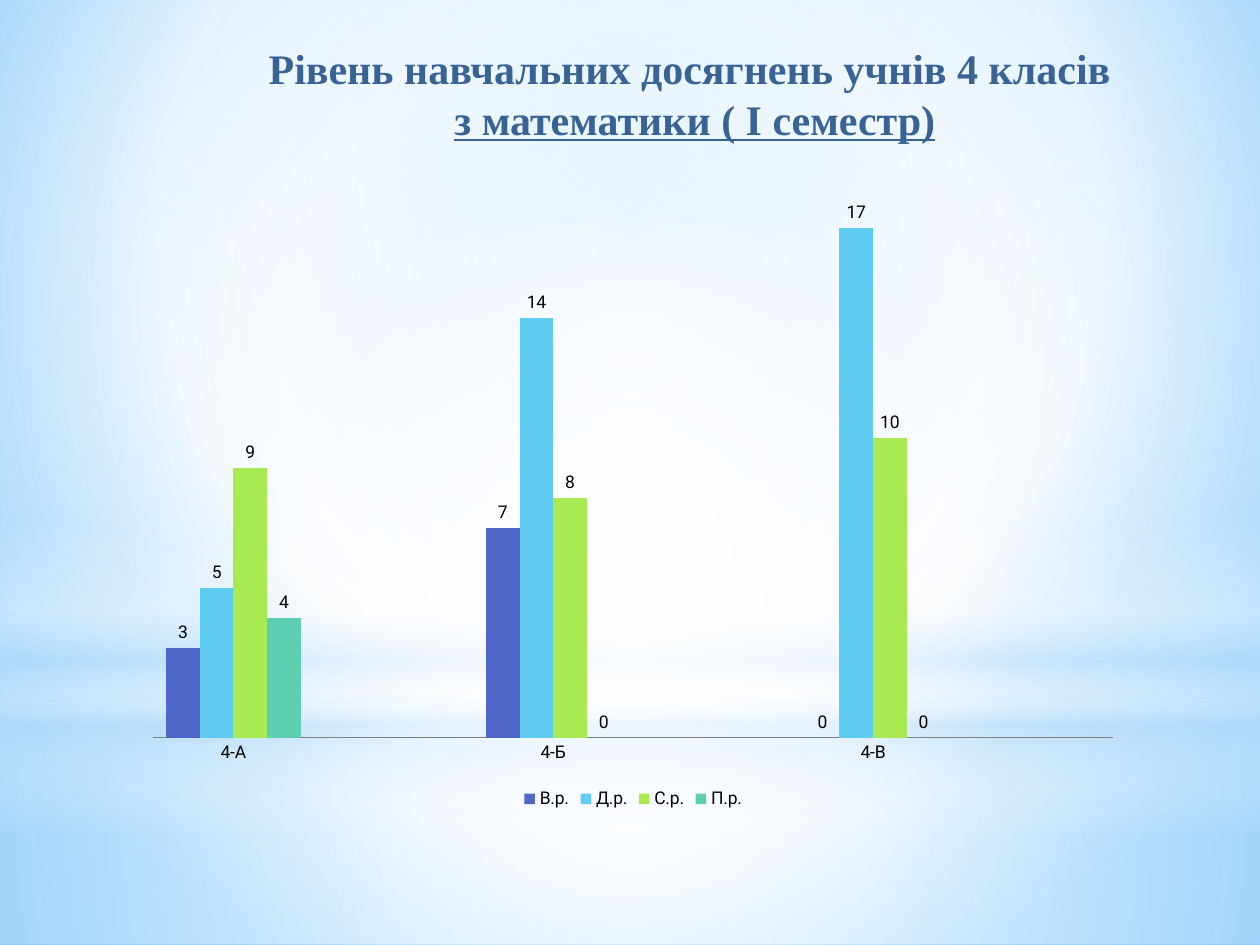
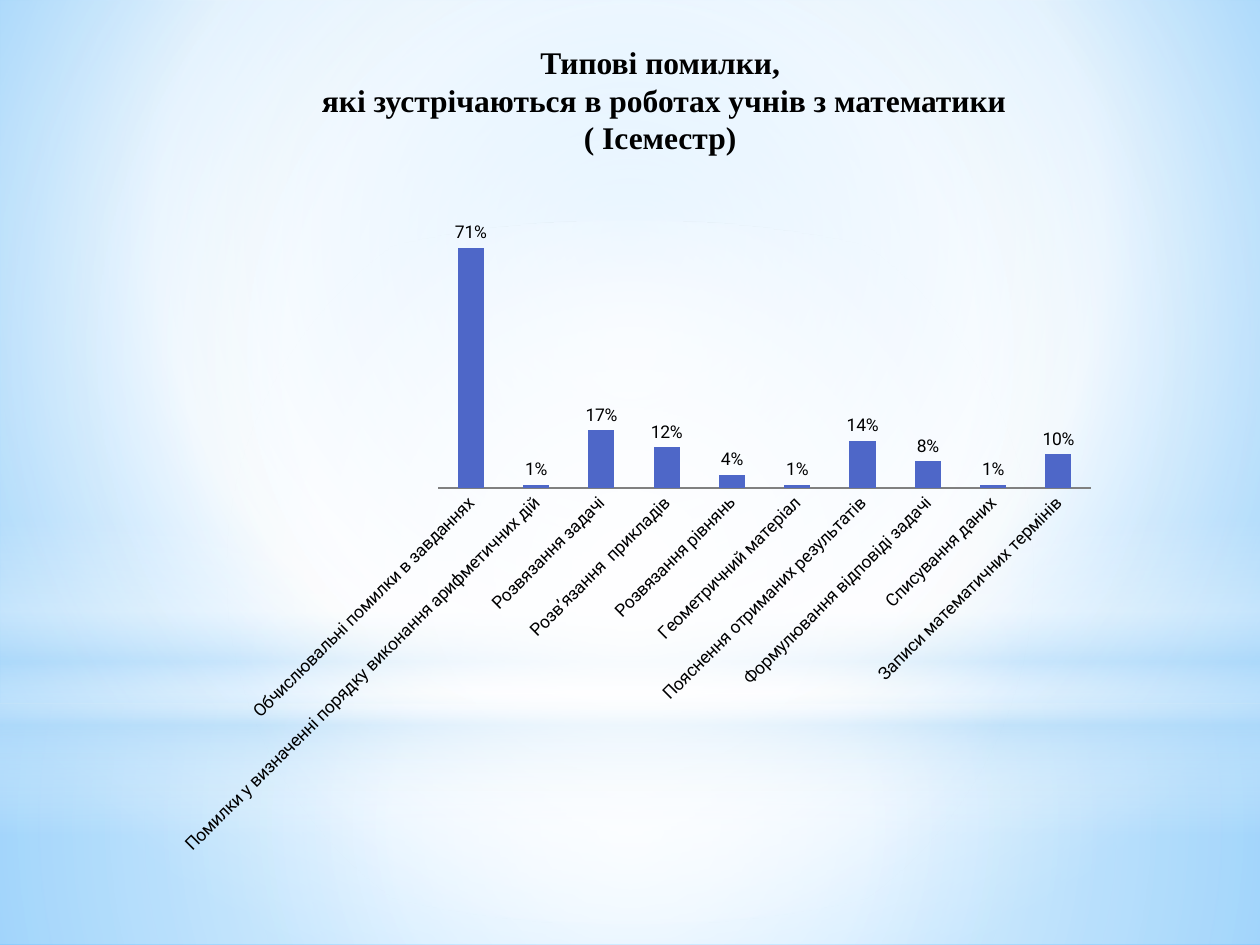
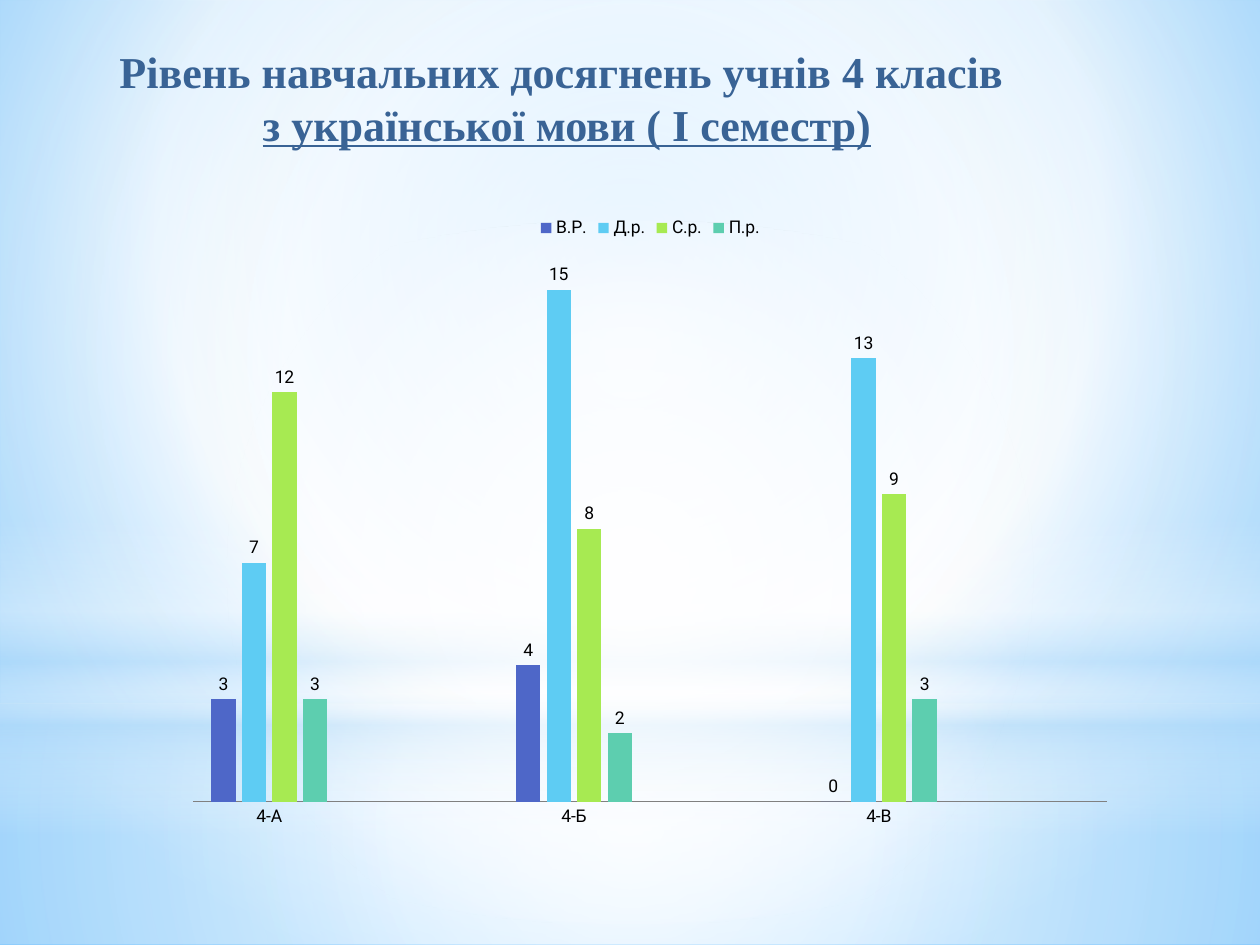
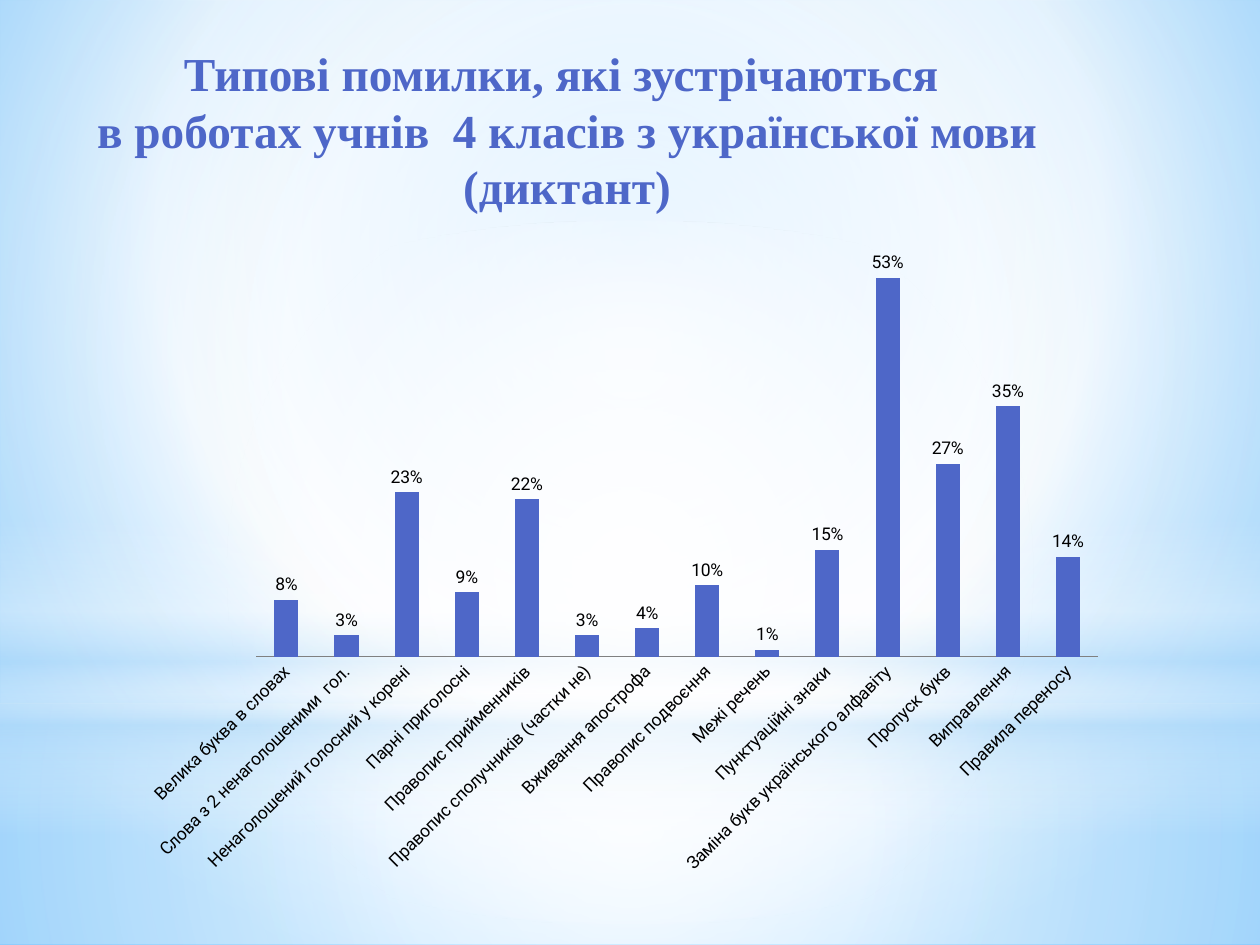
"""Build four slides of class results with column charts on a shared sky backdrop."""
import dataclasses

import lxml.etree
import pptx
import pptx.chart.data
import pptx.dml.color
import pptx.enum.chart
import pptx.enum.shapes
import pptx.enum.text
import pptx.oxml.ns
import pptx.util

Pt = pptx.util.Pt
RGB = pptx.dml.color.RGBColor.from_string
qn = pptx.oxml.ns.qn
Legend = pptx.enum.chart.XL_LEGEND_POSITION
Shape = pptx.enum.shapes.MSO_SHAPE


@dataclasses.dataclass(frozen=True)
class Theme:
    head: str = "Times New Roman"
    body: str = "Roboto"
    steel: str = "396395"
    blue: str = "4E67C8"
    black: str = "000000"
    axis: str = "808080"
    white: str = "FFFFFF"
    haze: str = "B4DCFA"
    sky: str = "9ED5FF"
    deep: str = "5BB9FF"
    bars: tuple = ("4E67C8", "5ECCF3", "A7EA52", "5DCEAF")
    label: float = 10
    small: float = 18
    large: float = 24
    wide: float = 25.2
    huge: float = 27


def gradient(stops, focus=None):
    fill = lxml.etree.Element(qn("a:gradFill"), rotWithShape="1")
    group = lxml.etree.SubElement(fill, qn("a:gsLst"))
    for place, color, alpha in stops:
        stop = lxml.etree.SubElement(group, qn("a:gs"), pos=str(place * 1000))
        tint = lxml.etree.SubElement(stop, qn("a:srgbClr"), val=color)
        if alpha < 100:
            lxml.etree.SubElement(tint, qn("a:alpha"), val=str(alpha * 1000))
    if focus:
        route = lxml.etree.SubElement(fill, qn("a:path"), path="circle")
        sides = {side: str(part * 1000) for side, part in zip("ltrb", focus)}
        lxml.etree.SubElement(route, qn("a:fillToRect"), **sides)
    else:
        lxml.etree.SubElement(fill, qn("a:lin"), ang="5400000", scaled="0")
    return fill


def paint(parent, fill):
    blank = parent.find(".//" + qn("a:noFill"))
    blank.getparent().replace(blank, fill)


class Deck:
    def __init__(self, theme):
        self.theme = theme
        self.show = pptx.Presentation()
        self.show.slide_width, self.show.slide_height = Pt(720), Pt(540)
        self.slide = None

    def add(self):
        self.slide = self.show.slides.add_slide(self.show.slide_layouts[5])

    def backdrop(self):
        t, mid = self.theme, (50, 50, 50, 50)
        master = self.show.slide_master
        master.background.fill.background()
        stops = [(0, t.sky, 100), (60, t.white, 100), (100, t.deep, 100)]
        paint(master.element, gradient(stops, (20, 10, 20, 60)))
        floor = [(0, t.white, 91), (37, t.white, 76), (100, t.haze, 79)]
        wall = [(0, t.white, 89), (48, t.white, 62), (100, t.haze, 79)]
        band = [(0, t.white, 0), (29, t.white, 30), (45, t.haze, 40),
                (55, t.white, 26), (65, t.haze, 60), (100, t.white, 0)]
        glow = [(0, t.white, 100), (56, t.white, 0)]
        layers = [(Shape.RECTANGLE, 402, 138, floor, mid),
                  (Shape.RECTANGLE, 0, 402, wall, mid),
                  (Shape.RECTANGLE, 297, 180, band, None),
                  (Shape.OVAL, 126, 402, glow, mid)]
        for index, (kind, top, height, stops, focus) in enumerate(layers):
            layer = self.slide.shapes.add_shape(kind, 0, Pt(top), Pt(720), Pt(height))
            layer.shadow.inherit = False
            layer.fill.background()
            layer.line.fill.background()
            paint(layer.element, gradient(stops, focus))
            master.element.cSld.spTree.insert(index + 2, layer.element)

    def title(self, box, paras, size, color, inset=3.6):
        title = self.slide.shapes.title
        title.left, title.top, title.width, title.height = map(Pt, box)
        frame = title.text_frame
        frame.word_wrap = True
        frame.auto_size = pptx.enum.text.MSO_AUTO_SIZE.NONE
        frame.vertical_anchor = pptx.enum.text.MSO_ANCHOR.TOP
        frame.margin_left = frame.margin_right = Pt(inset)
        frame.margin_top = frame.margin_bottom = Pt(3.6)
        for index, text in enumerate(paras):
            para = frame.add_paragraph() if index else frame.paragraphs[0]
            para.text = text
            para.alignment = pptx.enum.text.PP_ALIGN.CENTER
            self.style(para.font, self.theme.head, size, color)
            para.font.bold = True

    def underline(self):
        self.slide.shapes.title.text_frame.paragraphs[0].runs[-1].font.underline = True

    def style(self, font, name, size, color):
        font.name, font.size = name, Pt(size)
        font.color.rgb = RGB(color)

    def chart(self, box, cats, series, form="General", legend=None, gap=150, overlap=-25):
        data = pptx.chart.data.CategoryChartData(number_format=form)
        data.categories = cats
        for name, values in series:
            data.add_series(name, values)
        kind = pptx.enum.chart.XL_CHART_TYPE.COLUMN_CLUSTERED
        chart = self.slide.shapes.add_chart(kind, *map(Pt, box), data).chart
        self.style(chart.font, self.theme.body, self.theme.label, self.theme.black)
        chart.has_title = False
        chart.has_legend = legend is not None
        if chart.has_legend:
            chart.legend.position = legend
            chart.legend.include_in_layout = False
        chart.value_axis.visible = False
        chart.value_axis.has_major_gridlines = False
        axis = chart.category_axis
        axis.major_tick_mark = pptx.enum.chart.XL_TICK_MARK.NONE
        axis.format.line.color.rgb = RGB(self.theme.axis)
        axis.format.line.width = Pt(0.75)
        plot = chart.plots[0]
        plot.vary_by_categories = False
        plot.gap_width, plot.overlap = gap, overlap
        plot.has_data_labels = True
        labels = plot.data_labels
        labels.show_value = True
        labels.number_format, labels.number_format_is_linked = form, False
        labels.position = pptx.enum.chart.XL_LABEL_POSITION.OUTSIDE_END
        for bars, color in zip(plot.series, self.theme.bars):
            bars.format.fill.solid()
            bars.format.fill.fore_color.rgb = RGB(color)
            bars.invert_if_negative = False

    def levels(self, box, names, scores, **look):
        cats = ["4-А", "", "4-Б", "", "4-В", ""]
        series = [(name, [v for score in row for v in (score, None)])
                  for name, row in zip(names, scores)]
        self.chart(box, cats, series, **look)

    def errors(self, box, shares):
        values = [share / 100 for share in shares.values()]
        self.chart(box, list(shares), [("Series 1", values)], form="0%")


def main():
    theme = Theme()
    deck = Deck(theme)
    wide = (0, 21.6, 648, 90)

    deck.add()
    deck.backdrop()
    deck.title((93.6, 20.9, 607, 94.3),
               ["Рівень навчальних досягнень учнів 4 класів \vз математики ( І семестр)"],
               theme.large, theme.steel, 7.2)
    deck.underline()
    deck.levels((76.3, 105.8, 571, 359.3), ["В.р.", "Д.р.", "С.р.", "П.р."],
                [(3, 7, 0), (5, 14, 17), (9, 8, 10), (4, 0, 0)],
                legend=Legend.BOTTOM, gap=75, overlap=0)

    deck.add()
    deck.title((105.1, 20.9, 544.3, 72.7),
               ["Типові помилки,", " які зустрічаються в роботах учнів з математики",
                "( Ісеместр)"],
               theme.small, theme.black, 7.2)
    deck.errors((93.6, 116.6, 540.7, 379.4), {
        "Обчислювальні помилки в завданнях": 71,
        "Помилки у визначенні порядку виконання арифметичних дій": 1,
        "Розвязання задачі": 17,
        "Розв’язання  прикладів": 12,
        "Розвязання рівнянь": 4,
        "Геометричний матеріал": 1,
        "Пояснення отриманих результатів": 14,
        "Формулювання відповіді задачі": 8,
        "Списування даних": 1,
        "Записи математичних термінів": 10,
    })

    deck.add()
    deck.title(wide,
               ["Рівень навчальних досягнень учнів 4 класів \vз української мови ( І семестр)"],
               theme.wide, theme.steel)
    deck.underline()
    deck.levels((99.4, 116.6, 544.3, 362.9), ["В.Р.", "Д.р.", "С.р.", "П.р."],
                [(3, 4, 0), (7, 15, 13), (12, 8, 9), (3, 2, 3)], legend=Legend.TOP)

    deck.add()
    deck.title(wide,
               ["Типові помилки, які зустрічаються \v"
                "в роботах учнів  4 класів з української мови (диктант)"],
               theme.huge, theme.blue)
    deck.errors((76.3, 122.4, 563.8, 384.5), {
        "Велика буква в словах": 8,
        "Слова з 2 ненаголошеними  гол.": 3,
        "Ненаголошений голосний у корені": 23,
        "Парні приголосні": 9,
        "Правопис прийменників": 22,
        "Правопис сполучників (частки не)": 3,
        "Вживання апострофа": 4,
        "Правопис подвоєння": 10,
        "Межі речень": 1,
        "Пунктуаційні знаки": 15,
        "Заміна букв українського алфавіту": 53,
        "Пропуск букв": 27,
        "Виправлення": 35,
        "Правила переносу": 14,
    })
    deck.show.save("out.pptx")


if __name__ == "__main__":
    main()
